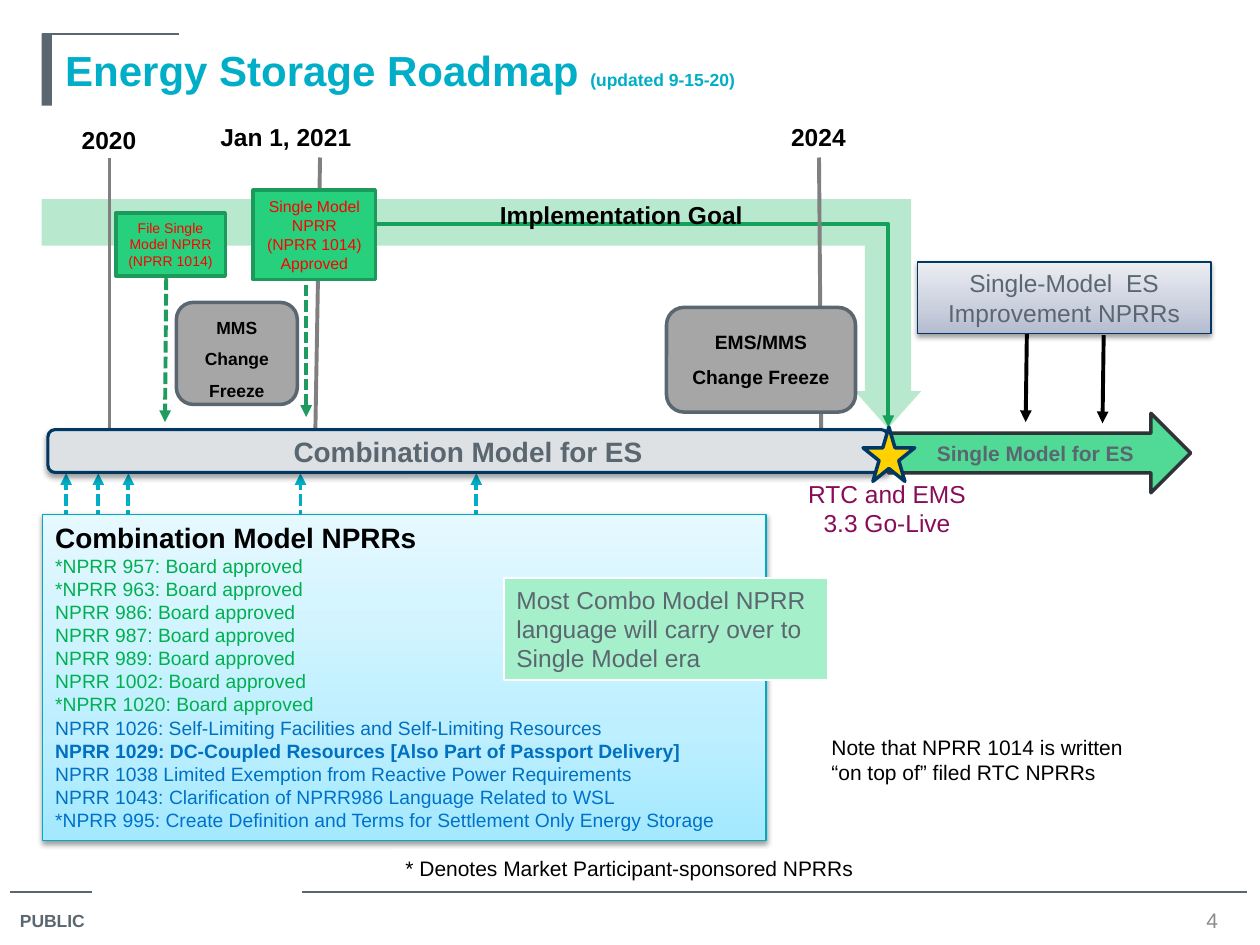
from copy import deepcopy
from lxml import etree
from pptx import Presentation
from pptx.dml.color import RGBColor
from pptx.enum.dml import MSO_LINE
from pptx.enum.shapes import MSO_CONNECTOR, MSO_SHAPE
from pptx.enum.text import MSO_ANCHOR, PP_ALIGN
from pptx.oxml.ns import qn
from pptx.util import Pt

RECT, ROUND = MSO_SHAPE.RECTANGLE, MSO_SHAPE.ROUNDED_RECTANGLE
ARROW, STAR, BEND = MSO_SHAPE.RIGHT_ARROW, MSO_SHAPE.STAR_5_POINT, MSO_SHAPE.BENT_UP_ARROW
STRAIGHT, ELBOW = MSO_CONNECTOR.STRAIGHT, MSO_CONNECTOR.ELBOW
DASH = MSO_LINE.SQUARE_DOT
LEFT, MID = PP_ALIGN.LEFT, PP_ALIGN.CENTER
TOP, CENTER = MSO_ANCHOR.TOP, MSO_ANCHOR.MIDDLE

HUES = {
    "slate": "5B6770", "teal": "00AEC7", "gray": "808080", "pale": "8C8C8C",
    "black": "000000", "white": "FFFFFF", "navy": "003763", "deep": "003865",
    "bar": "DDE1E3", "freeze": "A6A6A6", "green": "26D07C", "edge": "1C9A5C",
    "path_green": "1D9C5D", "goal": "00B050", "dark": "2E3438", "gold": "FFD100",
    "red": "FF0000", "plum": "890C58", "blue": "0070C0", "sky": "0071CB",
    "rim": "00AAC3", "mint": "A6EFCB",
}
STEEL = [(0, "B3BBD0"), (0.35, "CACFDD"), (1, "EBEDF2")]
AQUA = [(0, "A3E9FF"), (0.35, "BEEFFF"), (1, "E6F9FF")]

# Lines: x1, y1, x2, y2
RULES = [(5.8, 509.8, 52.6, 509.8), (172.8, 509.8, 712.8, 509.8), (23.8, 19.4, 102.2, 19.4)]
YEARS = [(62.6, 90, 62.6, 249), (182.9, 90, 180, 257.8), (468, 90, 469.4, 260)]
FILED = [(95, 159, 94.3, 241.2), (175, 162.7, 175, 238.3)]
IMPROVED = [(586.8, 190.8, 586.1, 241.2), (630.7, 191.5, 630, 241.9)]
COMBO = [(x, 316, x, 270.4) for x in (37.8, 56.2, 73.4, 171.7, 272.2)]
LINES = [
    (RULES, "slate", 0.75, None, False),
    (YEARS, "gray", 2.25, None, False),
    (COMBO, "teal", 2.25, DASH, True),
    (IMPROVED, "black", 2.25, None, True),
    (FILED, "path_green", 2.25, DASH, True),
]

# Text is a list of paragraphs, each a list of (words, size, colour, bold)
APPROVED = ["*NPRR 957", "*NPRR 963", "NPRR 986", "NPRR 987", "NPRR 989",
            "NPRR 1002", "*NPRR 1020"]
NPRRS = [[("Combination Model NPRRs", 16, "black", True)]]
NPRRS += [[(f"{name}: Board approved", 11, "goal", False)] for name in APPROVED]
NPRRS += [
    [("NPRR 1026: Self-Limiting Facilities and Self-Limiting Resources", 11, "blue", False)],
    [("NPRR 1029: DC-Coupled Resources [Also Part of Passport Delivery]", 11, "blue", True)],
    [("NPRR 1038 Limited Exemption from Reactive Power Requirements", 11, "blue", False)],
    [("NPRR 1043: ", 11, "blue", False),
     ("Clarification of NPRR986 Language Related to WSL", 11, "sky", False)],
    [("*NPRR 995: Create Definition and Terms for Settlement Only Energy Storage",
      11, "sky", False)],
]


def one(words, size, hue, bold=False):
    return [[(words, size, hue, bold)]]


# Text boxes: place, text, align, anchor, wrap
LABELS = [
    ((4.3, 516.2, 55.4, 20.2), one("PUBLIC", 10, "slate", True), LEFT, TOP, True),
    ((30.2, 19.4, 666, 41), [[("Energy Storage Roadmap ", 24, "teal", True),
                              ("(updated 9-15-20)", 10, "teal", True)]], LEFT, CENTER, True),
    ((671.8, 517, 41.8, 17.3), one("4", 12, "pale"), MID, CENTER, True),
    ((39.6, 67.7, 46.1, 24.5), one("2020", 14, "black", True), LEFT, TOP, False),
    ((118.8, 66.2, 89.3, 24.5), one("Jan 1, 2021", 14, "black", True), LEFT, TOP, False),
    ((445, 66.2, 46.1, 24.5), one("2024", 14, "black", True), LEFT, TOP, False),
    ((278.6, 110.9, 154.1, 24.5), one("Implementation Goal", 14, "black", True), LEFT, TOP, False),
    ((450, 270, 113.8, 41), one("RTC and EMS 3.3 Go-Live", 14, "plum"), MID, TOP, True),
    ((468, 416.2, 198, 36), one("Note that NPRR 1014 is written “on top of” filed RTC NPRRs",
                                12, "black"), LEFT, TOP, True),
]

# Shapes: kind, place, fill, (line, width), text, align, anchor, extras
BOXES = [
    (RECT, (23.8, 19.4, 5.8, 41), "slate", None, None, LEFT, TOP, {}),
    (ROUND, (27.4, 245.5, 480.2, 24.5), "bar", ("navy", 1.75),
     one("Combination Model for ES", 16, "slate", True), MID, CENTER, {"shade": True}),
    (RECT, (524.2, 149.8, 167.8, 41), STEEL, ("navy", 0.75),
     one("Single-Model  ES Improvement NPRRs", 14, "slate"), MID, TOP, {"shade": True}),
    (RECT, (144.7, 108.7, 69.8, 51.1), "green", ("edge", 2),
     one("Single Model NPRR (NPRR 1014) Approved", 9, "red"), MID, TOP, {}),
    (RECT, (66.2, 121.7, 62.6, 36), "green", ("edge", 2),
     one("File Single Model NPRR (NPRR 1014)", 8, "red"), MID, TOP, {}),
    (ARROW, (507.6, 236.2, 172.8, 45.4), "green", ("dark", 2),
     one("Single Model for ES", 12, "slate", True), MID, CENTER, {"alpha": 80, "indent": 13.9}),
    (STAR, (493.2, 244.1, 29.5, 31), "gold", ("deep", 2), None, MID, TOP, {}),
    (ROUND, (100.8, 172.8, 69.1, 58.3), "freeze", ("slate", 2),
     one("MMS Change Freeze", 10, "black", True), MID, CENTER, {"space": 1.5}),
    (ROUND, (380.9, 175.7, 108, 59.8), "freeze", ("slate", 2),
     one("EMS/MMS Change Freeze", 11, "black", True), MID, TOP, {"space": 1.5}),
    (RECT, (24.5, 293.8, 413.3, 186.5), AQUA, ("rim", 0.75), NPRRS, LEFT, TOP, {"shade": True}),
    (RECT, (288, 330.5, 185, 58.3), "mint", ("white", 1),
     one("Most Combo Model NPRR language will carry over to Single Model era", 14, "slate"),
     LEFT, TOP, {}),
    (RECT, (224.6, 485.3, 301.7, 21.6), "white", None,
     one("* Denotes Market Participant-sponsored NPRRs", 12, "black"), LEFT, TOP, {}),
]


def rgb(hue):
    return RGBColor.from_string(HUES.get(hue, hue))


def sub(node, tag, **attrs):
    return etree.SubElement(node, qn(tag), attrs)


def write(frame, text, align, anchor, wrap=True, space=None, indent=7.2):
    for key, val in {"word_wrap": wrap, "vertical_anchor": anchor,
                     "margin_left": Pt(indent)}.items():
        setattr(frame, key, val)
    for i, runs in enumerate(text):
        para = frame.add_paragraph() if i else frame.paragraphs[0]
        para.alignment, para.line_spacing = align, space
        for words, size, hue, bold in runs:
            run = para.add_run()
            run.text = words
            for key, val in {"name": "Arial", "size": Pt(size), "bold": bold}.items():
                setattr(run.font, key, val)
            run.font.color.rgb = rgb(hue)


def paint(shape, fill, alpha=None):
    """Fill with a colour, or with a gradient rising from the bottom."""
    props = shape._element.spPr
    if isinstance(fill, list):
        shape.fill.gradient()
        shape.fill.gradient_angle = 90
        stops = props.find(".//" + qn("a:gsLst"))
        stops.insert(1, deepcopy(stops[0]))
        for stop, (pos, hue) in zip(shape.fill.gradient_stops, fill):
            stop.position, stop.color.rgb = pos, rgb(hue)
        return
    shape.fill.solid()
    shape.fill.fore_color.rgb = rgb(fill)
    if alpha:
        sub(props.find(".//" + qn("a:srgbClr")), "a:alpha", val=str(alpha * 1000))


def box(shapes, kind, place, fill, line, alpha=None, shade=False):
    shape = shapes.add_shape(kind, *map(Pt, place))
    paint(shape, fill, alpha)
    if line:
        shape.line.color.rgb, shape.line.width = rgb(line[0]), Pt(line[1])
    else:
        shape.line.fill.background()
    shape.shadow.inherit = False
    if shade:
        glow = sub(shape._element.spPr.find(qn("a:effectLst")), "a:outerShdw",
                   blurRad=str(Pt(3.1)), dist=str(Pt(1.6)), dir="5400000", rotWithShape="0")
        sub(sub(glow, "a:srgbClr", val=HUES["black"]), "a:alpha", val="38000")
    return shape


def link(shapes, ends, hue, width, dash=None, head=False, kind=STRAIGHT):
    line = shapes.add_connector(kind, *map(Pt, ends))
    line.line.color.rgb, line.line.width = rgb(hue), Pt(width)
    if dash:
        line.line.dash_style = dash
    props = line._element.spPr
    if head:
        sub(props.find(qn("a:ln")), "a:tailEnd", type="triangle")
    sub(props, "a:effectLst")
    return line


def main():
    deck = Presentation()
    deck.slide_width, deck.slide_height = Pt(720), Pt(540)
    shapes = deck.slides.add_slide(deck.slide_layouts[6]).shapes

    elbow = link(shapes, (213.8, 128.2, 507.6, 244.1), "path_green", 2.25, head=True, kind=ELBOW)
    elbow._element.spPr.find(qn("a:prstGeom")).set("prst", "bentConnector2")
    goal = box(shapes, BEND, (23.8, 113.8, 502.6, 131), "goal", None, alpha=28)
    for i, val in enumerate((0.202, 0.145, 0.163)):
        goal.adjustments[i] = val
    goal.rotation = 180
    goal._element.spPr.find(qn("a:xfrm")).set("flipH", "1")

    for group, *style in LINES:
        for ends in group:
            link(shapes, ends, *style)
    for kind, place, fill, line, text, align, anchor, more in BOXES:
        look = {key: more[key] for key in ("alpha", "shade") if key in more}
        flow = {key: more[key] for key in ("space", "indent") if key in more}
        shape = box(shapes, kind, place, fill, line, **look)
        if text:
            write(shape.text_frame, text, align, anchor, **flow)
    for place, *rest in LABELS:
        write(shapes.add_textbox(*map(Pt, place)).text_frame, *rest)
    deck.save("out.pptx")


if __name__ == "__main__":
    main()
